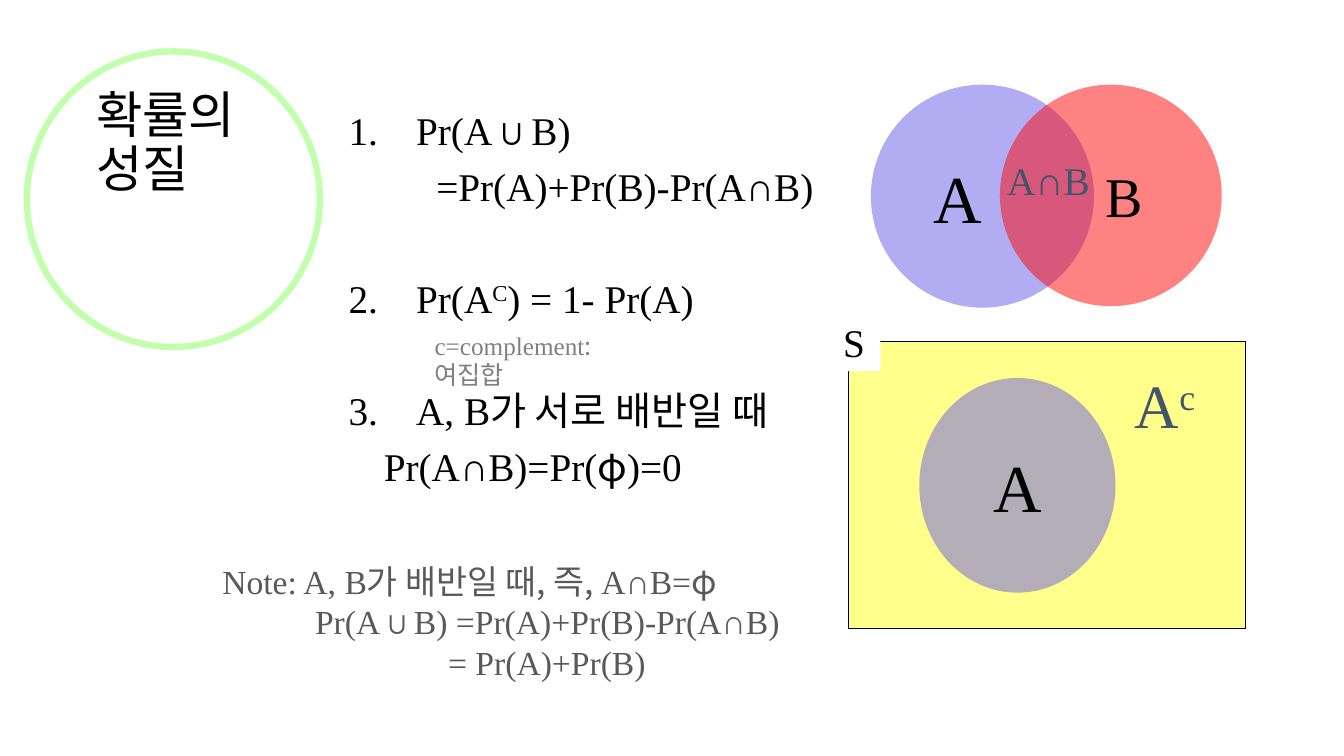
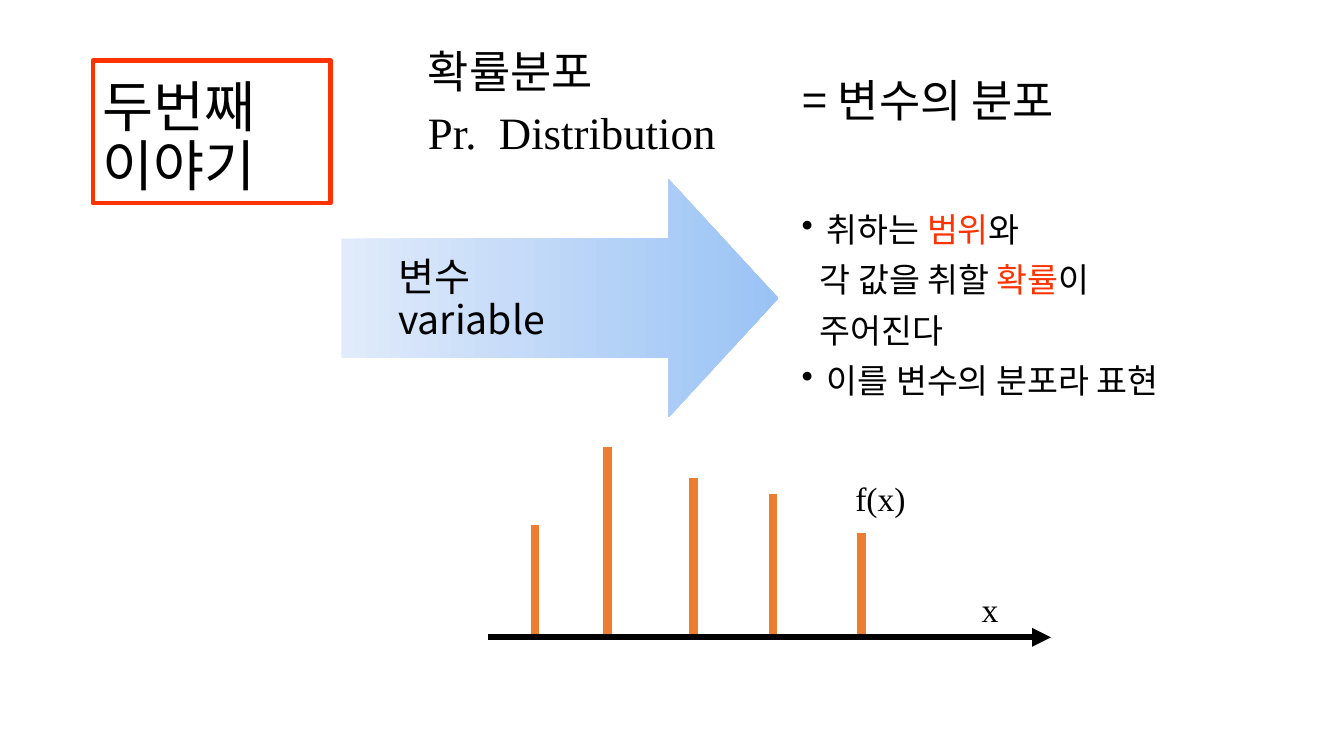
from lxml import etree
from pptx import Presentation
from pptx.dml.color import RGBColor
from pptx.enum.shapes import MSO_CONNECTOR, MSO_SHAPE
from pptx.enum.text import MSO_ANCHOR, PP_ALIGN
from pptx.oxml.ns import qn
from pptx.util import Inches, Pt

WIDTH, HEIGHT = Inches(13.33), Inches(7.5)
TITLE_ONLY = 5
OVAL, RECTANGLE, ARROW = MSO_SHAPE.OVAL, MSO_SHAPE.RECTANGLE, MSO_SHAPE.RIGHT_ARROW
STRAIGHT = MSO_CONNECTOR.STRAIGHT
TOP, MIDDLE = MSO_ANCHOR.TOP, MSO_ANCHOR.MIDDLE
LEFT, CENTER = PP_ALIGN.LEFT, PP_ALIGN.CENTER

SERIF, KOREAN, SYMBOL = "Times New Roman", "Noto Sans CJK KR", "Noto Sans CJK JP"
BLACK, WHITE, SLATE, GRAY, LIGHT_GRAY = "000000", "FFFFFF", "44546A", "595959", "808080"
RED, GREEN, YELLOW, VIOLET = "FF0000", "66FF33", "FFFF00", "6359E5"
ACCENT, BAR = "FF3300", "ED7D31"
ARROW_START, ARROW_END = "E1EBFB", "9AC3F5"


def rgb(color):
    return RGBColor.from_string(color)


def across(share):
    """Length from a percentage of the slide width."""
    return round(WIDTH * share / 100)


def down(share):
    """Length from a percentage of the slide height."""
    return round(HEIGHT * share / 100)


def area(left, top, width, height):
    return across(left), down(top), across(width), down(height)


def set_values(target, values):
    for name, value in values.items():
        setattr(target, name, value)


def span(text, font=SERIF, color=None, **marks):
    """One stretch of text; marks are raw run attributes such as baseline."""
    return {"text": text, "font": font, "color": color, "marks": marks}


def line(*spans, margin=0, hanging=0, before=0, bullet=None, start=None):
    """One paragraph; margin and hanging are in inches, before in points."""
    return {"spans": spans, "margin": margin, "hanging": hanging,
            "before": before, "bullet": bullet, "start": start}


def add_span(para, content, size, color):
    for index, text in enumerate(content["text"].split("\n")):
        if index:
            para.add_line_break()
        run = para.add_run()
        run.text = text
        set_values(run.font, {"name": content["font"], "size": Pt(size)})
        run.font.color.rgb = rgb(content["color"] or color)
        properties = run.font._element
        east_asian = KOREAN if content["font"] == SERIF else content["font"]
        etree.SubElement(properties, qn("a:ea")).set("typeface", east_asian)
        for name, value in content["marks"].items():
            properties.set(name, str(value))


def indent(para, content):
    properties = para._p.get_or_add_pPr()
    properties.set("marL", str(Inches(content["margin"])))
    properties.set("indent", str(-Inches(content["hanging"])))
    if content["bullet"]:
        etree.SubElement(properties, qn("a:buChar")).set("char", content["bullet"])
    elif content["start"]:
        number = etree.SubElement(properties, qn("a:buAutoNum"))
        number.set("type", "arabicPeriod")
        number.set("startAt", str(content["start"]))
    else:
        etree.SubElement(properties, qn("a:buNone"))


def write(shape, lines, size, color=BLACK, pitch=None, anchor=TOP, align=LEFT,
          wrap=True, **margins):
    """Fill a shape with lines; pitch is the fixed line height in points."""
    frame = shape.text_frame
    set_values(frame, {"word_wrap": wrap, "vertical_anchor": anchor, **margins})
    for index, content in enumerate(lines):
        para = frame.add_paragraph() if index else frame.paragraphs[0]
        set_values(para, {"alignment": align, "space_before": Pt(content["before"]),
                          "line_spacing": Pt(pitch) if pitch else 1.0})
        indent(para, content)
        for item in content["spans"]:
            add_span(para, item, size, color)


def add_text(page, place, lines, size, **style):
    box = page.shapes.add_textbox(*area(*place))
    write(box, lines, size, **style)
    return box


def add_label(page, place, size, *spans, **style):
    return add_text(page, place, [line(*spans)], size, wrap=False, **style)


def set_alpha(properties, percent):
    """Set the opacity of the first colour among the XML properties."""
    color = properties.find(".//" + qn("a:srgbClr"))
    etree.SubElement(color, qn("a:alpha")).set("val", str(percent * 1000))


def outline(shape, color, width):
    shape.line.color.rgb = rgb(color)
    shape.line.width = Pt(width)


def add_figure(page, kind, place, fill=None, alpha=100):
    figure = page.shapes.add_shape(kind, *area(*place))
    figure.shadow.inherit = False
    figure.line.fill.background()
    if fill:
        figure.fill.solid()
        figure.fill.fore_color.rgb = rgb(fill)
        set_alpha(figure._element.spPr, alpha)
    else:
        figure.fill.background()
    return figure


def add_set(page, place, fill, name, size, **margins):
    """Translucent circle of a Venn diagram with its name."""
    circle = add_figure(page, OVAL, place, fill, 49)
    write(circle, [line(span(name))], size, anchor=MIDDLE, align=CENTER, **margins)


def add_line(page, start, end, color, width, arrow=False):
    connector = page.shapes.add_connector(
        STRAIGHT, across(start[0]), down(start[1]), across(end[0]), down(end[1]))
    outline(connector, color, width)
    properties = connector._element.spPr
    if arrow:
        stroke = properties.find(qn("a:ln"))
        etree.SubElement(stroke, qn("a:tailEnd")).set("type", "triangle")
    etree.SubElement(properties, qn("a:effectLst"))


def add_page(deck, title, place, size, pitch, **margins):
    page = deck.slides.add_slide(deck.slide_layouts[TITLE_ONLY])
    heading = page.shapes.title
    set_values(heading, dict(zip(("left", "top", "width", "height"), area(*place))))
    write(heading, [line(span(title, KOREAN))], size, pitch=pitch,
          anchor=MIDDLE, **margins)
    return page


def build_properties(deck):
    page = add_page(deck, "확률의\n성질", (6.4, 12.1, 13.8, 13.9), 36, 38)
    numbered = {"margin": 0.67, "hanging": 0.67}
    add_text(page, (25.2, 14.1, 37.5, 56), [
        line(span("Pr(A∪B)"), start=1, **numbered),
        line(span("=Pr(A)+Pr(B)-Pr(A∩B)"), margin=0.87, before=10),
        line(span("Pr(A"), span("C", baseline=30000), span(") = 1- Pr(A)"),
             start=2, before=50, **numbered),
        line(span("A, B"), span("가 서로 배반일 때", KOREAN),
             start=3, before=50, **numbered),
        line(span("Pr(A∩B)=Pr("), span("φ", SYMBOL), span(")=0"),
             margin=0.35, before=10),
    ], 28, pitch=30)

    ring = add_figure(page, OVAL, (2, 6.8, 21.8, 39.1))
    outline(ring, GREEN, 4.5)
    set_alpha(ring._element.spPr, 40)

    add_set(page, (64.8, 11.2, 16.6, 29.5), VIOLET, "A", 48, margin_right=Inches(0.58))
    add_set(page, (74.4, 11.2, 16.5, 29.3), RED, "B", 40, margin_left=Inches(0.37))
    add_label(page, (74.2, 20, 8, 7.6), 28, span("A∩B"), color=SLATE)

    space = add_figure(page, RECTANGLE, (63.1, 45.2, 29.6, 37.9), YELLOW, 45)
    outline(space, BLACK, 0.75)
    add_set(page, (68.4, 50, 14.6, 28.4), VIOLET, "A", 48)
    add_label(page, (83.7, 47.9, 7.6, 11.2), 44,
              span("A"), span("c", baseline=30000), color=SLATE)
    space_name = add_label(page, (62, 41.5, 3.5, 7.6), 28, span("S"))
    space_name.fill.solid()
    space_name.fill.fore_color.rgb = rgb(WHITE)

    add_text(page, (15.8, 72.7, 43.7, 18.9), [
        line(span("Note: A, B"), span("가 배반일 때, 즉, ", KOREAN),
             span("A∩B="), span("φ", SYMBOL)),
        line(span("Pr(A∪B) =Pr(A)+Pr(B)-Pr(A∩B)"), margin=0.92),
        line(span("= Pr(A)+Pr(B)"), margin=2.24),
    ], 24, color=GRAY, pitch=29, anchor=MIDDLE)
    add_text(page, (31.6, 43.1, 14.3, 8),
             [line(span("c=complement"), span(": 여집합", KOREAN))],
             18, color=LIGHT_GRAY, pitch=21)


def build_distribution(deck):
    page = add_page(deck, "두번째\n이야기", (6.9, 8, 17.7, 18.9), 39.6, 41.5,
                    margin_top=Inches(0.19))
    outline(page.shapes.title, ACCENT, 3)
    add_text(page, (31.1, 6, 33.2, 25.7), [
        line(span("확률분포", KOREAN)),
        line(span("Pr."), span(" ", spc=800), span("Distribution"), before=9),
    ], 32, pitch=34)

    arrow = add_figure(page, ARROW, (25.4, 23.7, 32.5, 31.5))
    arrow.adjustments[0], arrow.adjustments[1] = 0.5, 0.46
    arrow.fill.gradient()
    arrow.fill.gradient_angle = 0
    for stop, color in zip(arrow.fill.gradient_stops, (ARROW_START, ARROW_END)):
        stop.color.rgb = rgb(color)
    add_text(page, (28.9, 24, 22, 31.3), [line(span("변수\nvariable", KOREAN))],
             28, pitch=30.7, anchor=MIDDLE)

    bulleted = {"margin": 0.25, "hanging": 0.25, "bullet": "•"}
    add_text(page, (58.9, 27.5, 36, 32.7), [
        line(span("취하는 ", KOREAN), span("범위", KOREAN, ACCENT),
             span("와", KOREAN), **bulleted),
        line(span("각 값을 취할 ", KOREAN), span("확률", KOREAN, ACCENT),
             span("이", KOREAN), margin=0.18, before=10),
        line(span("주어진다", KOREAN), margin=0.18, before=10),
        line(span("이를 변수의 분포라 표현", KOREAN), before=10, **bulleted),
    ], 24, pitch=26)

    baseline = 84.3
    bars = [(39.8, 69.5), (45.2, 59.1), (51.6, 63.2), (57.5, 65.3), (64.1, 70.5)]
    for x, top in bars:
        add_line(page, (x, top), (x, baseline), BAR, 6)
    add_label(page, (72.3, 77.2, 4.7, 6.7), 24, span("x"))
    add_label(page, (62.9, 62.6, 5.9, 6.7), 24, span("f(x)"))
    add_line(page, (36.3, baseline), (78.2, baseline), BLACK, 4.5, arrow=True)
    add_label(page, (59, 8.7, 21.5, 8.5), 32, span("= 변수의 분포", KOREAN), pitch=40)


def main():
    deck = Presentation()
    deck.slide_width, deck.slide_height = WIDTH, HEIGHT
    build_properties(deck)
    build_distribution(deck)
    deck.save("out.pptx")


if __name__ == "__main__":
    main()
